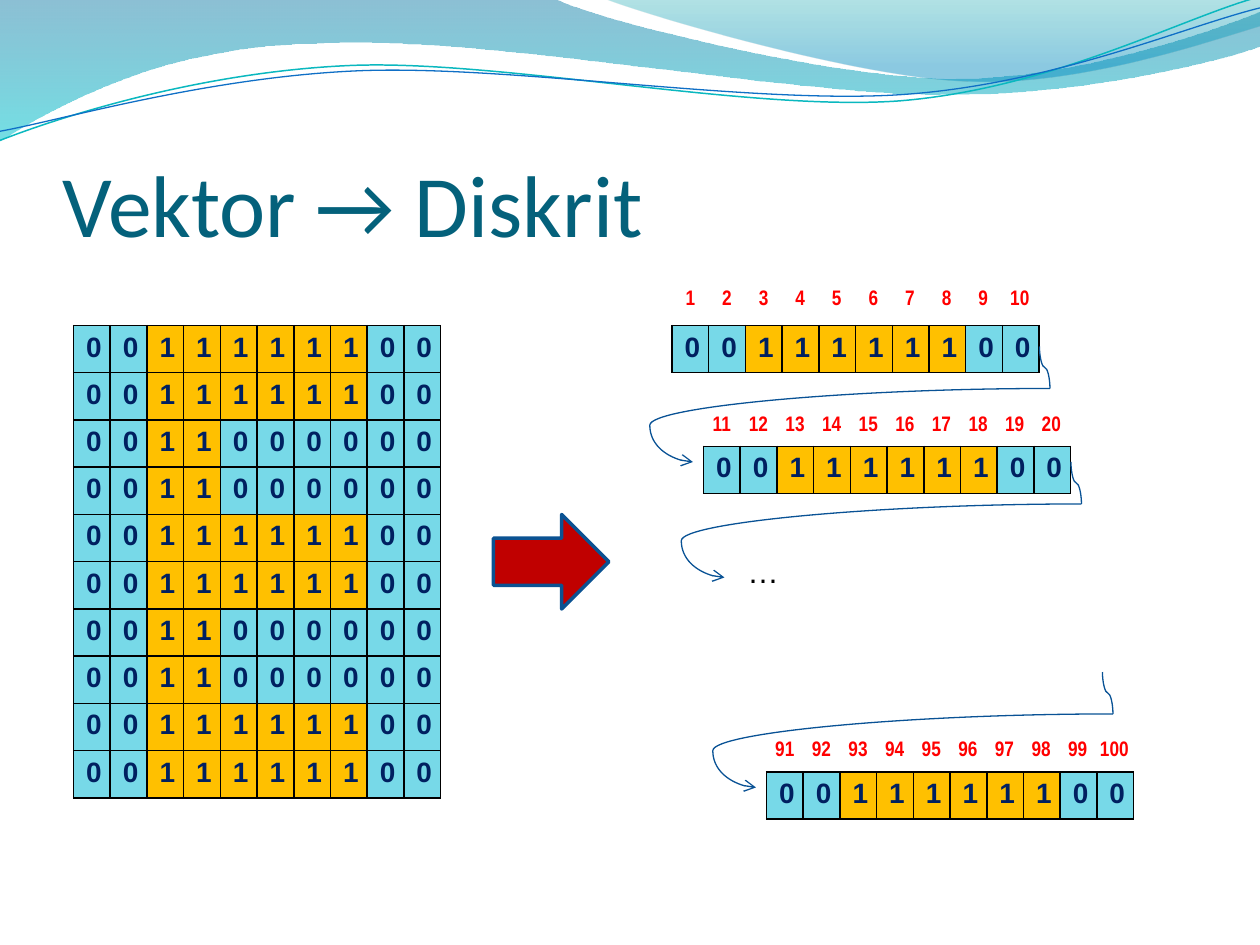
import pptx
import pptx.util
import pptx.dml.color
import pptx.enum.shapes
import pptx.enum.text
import pptx.oxml.ns
from lxml import etree

UNIT = 914400 // 96
COUNT = 10
NO_STYLE = "{2D5ABB26-0587-4C30-8999-92F81FD0307C}"
BIT_FILLS = {"0": "77D9E8", "1": "FFC000"}
FULL_ROW = "0011111100"
STEM_ROW = "0011000000"
LETTER_ROWS = ([FULL_ROW] * 2 + [STEM_ROW] * 2) * 2 + [FULL_ROW] * 2

WAVES = [
    ([(0, -1), (422, -1), (457, 16, 637, 60, 728, 60),
      (819, 60, 920, 25, 960, 9), (961, 35),
      (944, 42, 835, 73, 716, 72), (597, 72, 367, 27, 247, 33),
      (124, 34, 44, 80, -1, 108)],
     [(0, "0074A1", 45), (1, "00C6CF", 55)]),
    ([(460, -1), (489, 11, 655, 60, 738, 62),
      (822, 66, 923, 31, 960, 20), (960, 0)],
     [(0, "00A1A9", 30), (0.8, "008BBF", 45)]),
]
RIPPLES = [
    ([(0, 107), (46, 89, 152, 55, 266, 50), (379, 45, 569, 85, 684, 77),
      (800, 68, 900, 14, 958, -2)], "0AB8BF", 0.85),
    ([(0, 100), (45, 92, 157, 59, 272, 54), (387, 49, 573, 80, 688, 72),
      (803, 64, 903, 20, 960, 6)], "0F6FC6", 0.75),
]


def px(value):
    return pptx.util.Emu(value * UNIT)


def color(code):
    return pptx.dml.color.RGBColor.from_string(code)


def qualified(tag):
    return pptx.oxml.ns.qn(tag)


def add_child(parent, tag, **attributes):
    return etree.SubElement(parent, qualified(tag), attributes)


def set_line(line, code, width):
    line.color.rgb = color(code)
    line.width = pptx.util.Pt(width)


def add_run(paragraph, text, font, size, code, bold=False):
    run = paragraph.add_run()
    run.text = text
    run.font.name = font
    run.font.size = pptx.util.Pt(size)
    run.font.bold = bold
    run.font.color.rgb = color(code)


def add_outline(slide, segments, close):
    start, *rest = segments
    builder = slide.shapes.build_freeform(*start, scale=UNIT)
    builder.add_line_segments([segment[-2:] for segment in rest], close=close)
    outline = builder.convert_to_shape()
    outline.shadow.inherit = False
    left = min(segment[-2] for segment in segments)
    top = min(segment[-1] for segment in segments)
    edges = list(outline.element.spPr.iter(qualified("a:lnTo")))
    for edge, segment in zip(edges, rest):
        if len(segment) == 6:
            bend = etree.Element(qualified("a:cubicBezTo"))
            for x, y in zip(segment[::2], segment[1::2]):
                add_child(bend, "a:pt", x=str(x - left), y=str(y - top))
            edge.getparent().replace(edge, bend)
    return outline


def add_wave(slide, segments, stops):
    wave = add_outline(slide, segments, True)
    wave.line.fill.background()
    wave.fill.gradient()
    wave.fill.gradient_angle = 270
    for stop, (position, code, _) in zip(wave.fill.gradient_stops, stops):
        stop.position = position
        stop.color.rgb = color(code)
    tints = wave.element.spPr.iter(qualified("a:srgbClr"))
    for tint, (_, _, opacity) in zip(tints, stops):
        add_child(tint, "a:alpha", val=str(opacity * 1000))


def add_ripple(slide, segments, code, width):
    ripple = add_outline(slide, segments, False)
    ripple.fill.background()
    set_line(ripple.line, code, width)


def add_text(slide, x, y, width, height, text, font, size, code):
    box = slide.shapes.add_textbox(px(x), px(y), px(width), px(height))
    box.text_frame.word_wrap = True
    add_run(box.text_frame.paragraphs[0], text, font, size, code)
    return box.text_frame


def add_grid(slide, x, y, width, rows, row_height, style_cell):
    grid = slide.shapes.add_table(len(rows), COUNT, px(x), px(y), px(width),
                                  px(row_height * len(rows))).table
    grid.first_row = grid.horz_banding = False
    grid._tbl.tblPr.find(qualified("a:tableStyleId")).text = NO_STYLE
    for row, values in enumerate(rows):
        for column, value in enumerate(values):
            cell = grid.cell(row, column)
            cell.text_frame.paragraphs[0].alignment = pptx.enum.text.PP_ALIGN.CENTER
            style_cell(cell, value)


def style_bit(cell, bit):
    add_run(cell.text_frame.paragraphs[0], bit, "Arial", 16, "002060", True)
    properties = cell._tc.get_or_add_tcPr()
    for side in ("a:lnL", "a:lnR", "a:lnT", "a:lnB"):
        border = add_child(properties, side, w="12700")
        add_child(add_child(border, "a:solidFill"), "a:srgbClr", val="000000")
    cell.fill.solid()
    cell.fill.fore_color.rgb = color(BIT_FILLS[bit])


def add_bits(slide, x, y, rows):
    add_grid(slide, x, y, 280, rows, 36, style_bit)


def add_indexes(slide, x, y, first, margin):
    def style_index(cell, number):
        cell.fill.background()
        cell.margin_left = cell.margin_right = px(margin)
        add_run(cell.text_frame.paragraphs[0], str(number), "Arial Narrow", 12, "FF0000", True)

    add_grid(slide, x, y, 279, [range(first, first + COUNT)], 37, style_index)


def add_curve(slide, x1, y1, x2, y2, bend):
    curve = slide.shapes.add_connector(pptx.enum.shapes.MSO_CONNECTOR.CURVE,
                                       px(x1), px(y1), px(x2), px(y2))
    set_line(curve.line, "095295", 0.75)
    properties = curve.element.spPr
    guides = properties.prstGeom.get_or_add_avLst()
    add_child(guides, "a:gd", name="adj1", fmla=f"val {bend}")
    add_child(properties, "a:effectLst")
    return curve


def add_wrap_link(slide, x, y):
    turn_x, turn_y = x + 8, y + 32
    back = add_curve(slide, turn_x, turn_y, turn_x - 272, turn_y + 56, 112100)
    add_child(back.line._get_or_add_ln(), "a:tailEnd", type="arrow")
    middle_x, middle_y = x + 4, y + 16
    drop = add_curve(slide, middle_x + 16, middle_y - 4, middle_x - 16, middle_y + 4, 50000)
    drop.element.spPr.xfrm.set("rot", str(270 * 60000))


def add_block_arrow(slide, x, y, width, height):
    arrow = slide.shapes.add_shape(pptx.enum.shapes.MSO_SHAPE.RIGHT_ARROW,
                                   px(x), px(y), px(width), px(height))
    arrow.shadow.inherit = False
    arrow.fill.solid()
    arrow.fill.fore_color.rgb = color("C00000")
    set_line(arrow.line, "0B5292", 2)


def main():
    deck = pptx.Presentation()
    deck.slide_width, deck.slide_height = px(960), px(720)
    slide = deck.slides.add_slide(deck.slide_layouts[6])
    for segments, stops in WAVES:
        add_wave(slide, segments, stops)
    for segments, code, width in RIPPLES:
        add_ripple(slide, segments, code, width)

    title = add_text(slide, 48, 74, 864, 120, "Vektor → Diskrit", "Calibri", 50, "04617B")
    title.vertical_anchor = pptx.enum.text.MSO_ANCHOR.BOTTOM
    title.margin_left = title.margin_right = title.margin_bottom = 0

    add_bits(slide, 56, 248, LETTER_ROWS)
    add_block_arrow(slide, 376, 392, 88, 72)
    for x, y, index_y, first, margin in [(512, 248, 216, 1, 4), (536, 340, 312, 11, 4),
                                         (584, 588, 560, 91, 0)]:
        add_bits(slide, x, y, [FULL_ROW])
        add_indexes(slide, x, index_y, first, margin)
    for x, y in [(792, 264), (816, 352), (840, 512)]:
        add_wrap_link(slide, x, y)
    ellipsis = add_text(slide, 560, 416, 160, 39, "…", "Arial", 18, "000000")
    ellipsis.auto_size = pptx.enum.text.MSO_AUTO_SIZE.SHAPE_TO_FIT_TEXT
    deck.save("out.pptx")


if __name__ == "__main__":
    main()
